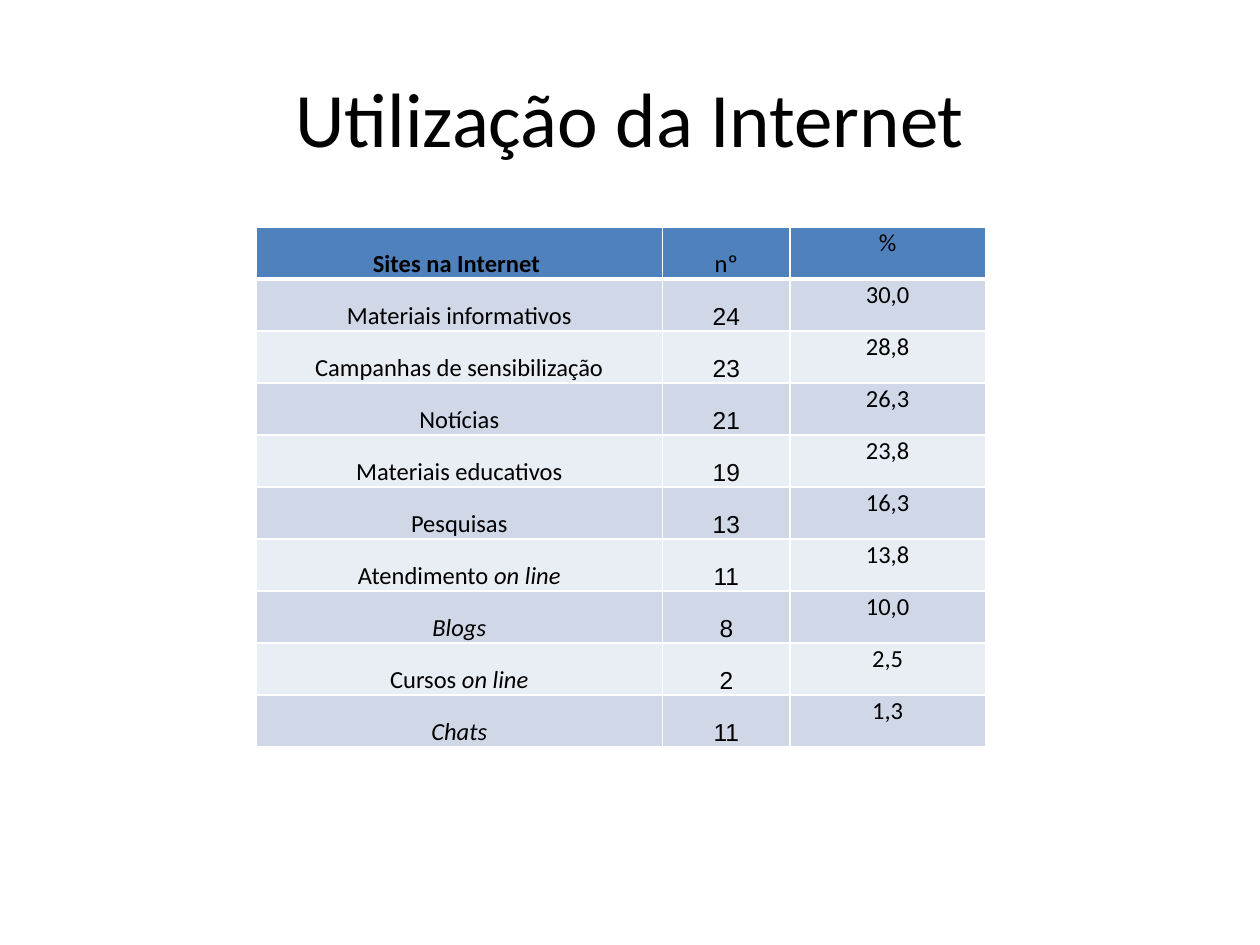
from typing import NamedTuple

from lxml.etree import SubElement
from pptx import Presentation
from pptx.dml.color import RGBColor
from pptx.enum.text import MSO_ANCHOR, PP_ALIGN
from pptx.oxml.ns import qn
from pptx.util import Inches, Pt

BLACK = RGBColor(0x00, 0x00, 0x00)
WHITE = RGBColor(0xFF, 0xFF, 0xFF)
BLUE = RGBColor(0x4F, 0x81, 0xBD)
DARK = RGBColor(0xD0, 0xD8, 0xE8)
LIGHT = RGBColor(0xE9, 0xED, 0xF4)

WIDE, HIGH = Inches(10), Inches(7.5)
COLS = (3.23, 1.01, 1.55)
ROW = 0.413


class Site(NamedTuple):
    name: str
    slant: str
    count: str
    share: str


HEAD = Site("Sites na Internet ", "", "nº", "%")
SITES = (
    Site("Materiais informativos", "", "24", "30,0"),
    Site("Campanhas de sensibilização", "", "23", "28,8"),
    Site("Notícias", "", "21", "26,3"),
    Site("Materiais educativos", "", "19", "23,8"),
    Site("Pesquisas", "", "13", "16,3"),
    Site("Atendimento ", "on line", "11", "13,8"),
    Site("", "Blogs", "8", "10,0"),
    Site("Cursos ", "on line", "2", "2,5"),
    Site("", "Chats", "11", "1,3"),
)


def write(frame, text: str, slant: str, size: int, face: str, bold: bool) -> None:
    para = frame.paragraphs[0]
    para.alignment = PP_ALIGN.CENTER
    for part, tilt in ((text, False), (slant, True)):
        if part:
            run = para.add_run()
            run.text = part
            font = run.font
            font.size, font.name = Pt(size), face
            font.bold, font.italic = bold, tilt
            font.color.rgb = BLACK


def edge(cell, top: int, base: int) -> None:
    props = cell._tc.get_or_add_tcPr()
    for side, width in (("L", 1), ("R", 1), ("T", top), ("B", base)):
        line = SubElement(props, qn(f"a:ln{side}"), w=str(Pt(width)))
        fill = SubElement(line, qn("a:solidFill"))
        SubElement(fill, qn("a:srgbClr"), val=str(WHITE))


def draw_row(table, row: int, site: Site) -> None:
    head = row == 0
    tint = BLUE if head else DARK if row % 2 else LIGHT
    parts = ((site.name, site.slant), (site.count, ""), (site.share, ""))
    for col, (text, slant) in enumerate(parts):
        cell = table.cell(row, col)
        cell.margin_left = cell.margin_right = cell.margin_top = Inches(0.01)
        cell.margin_bottom = 0
        cell.vertical_anchor = MSO_ANCHOR.TOP if col == 2 else MSO_ANCHOR.BOTTOM
        edge(cell, 3 if row == 1 else 1, 3 if head else 1)
        cell.fill.solid()
        cell.fill.fore_color.rgb = tint
        face = "Arial" if col == 1 and not head else "Calibri"
        write(cell.text_frame, text, slant, 14, face, head and col == 0)


def draw_title(slide, text: str) -> None:
    box = slide.shapes.add_textbox(
        int(WIDE * 0.05), int(HIGH * 0.04), int(WIDE * 0.9), Inches(1.25))
    frame = box.text_frame
    frame.word_wrap = True
    frame.vertical_anchor = MSO_ANCHOR.MIDDLE
    write(frame, text, "", 44, "Calibri", False)


def draw_table(slide, sites: tuple[Site, ...]) -> None:
    count = len(sites)
    table = slide.shapes.add_table(
        count, len(COLS), Inches(2.03), int(HIGH * 0.24),
        Inches(sum(COLS)), Inches(ROW * count)).table
    for col, width in zip(table.columns, COLS):
        col.width = Inches(width)
    for row, site in enumerate(sites):
        table.rows[row].height = Inches(ROW)
        draw_row(table, row, site)


def main() -> None:
    deck = Presentation()
    deck.slide_width, deck.slide_height = WIDE, HIGH
    slide = deck.slides.add_slide(deck.slide_layouts[6])
    draw_title(slide, "Utilização da Internet")
    draw_table(slide, (HEAD, *SITES))
    deck.save("out.pptx")


if __name__ == "__main__":
    main()
